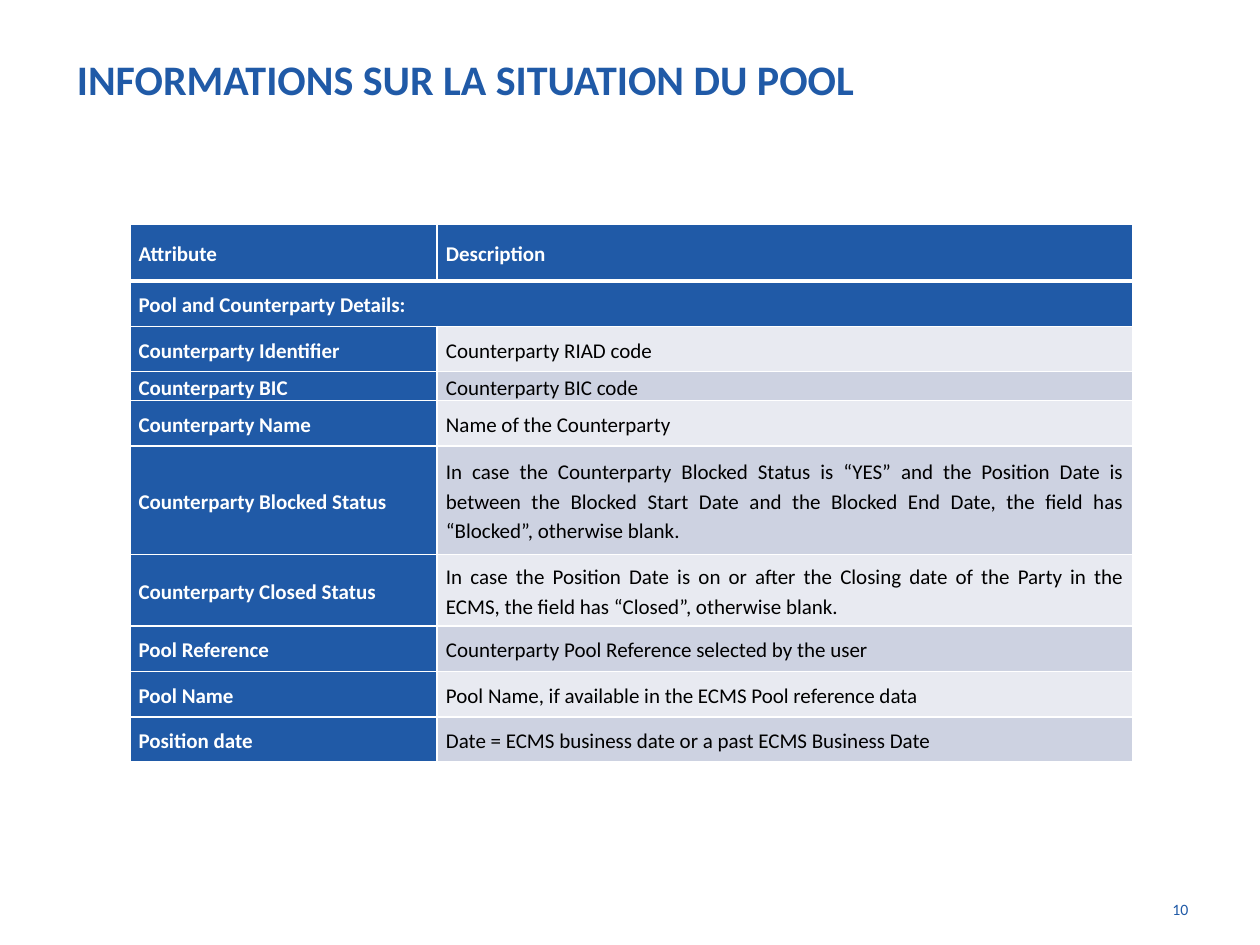
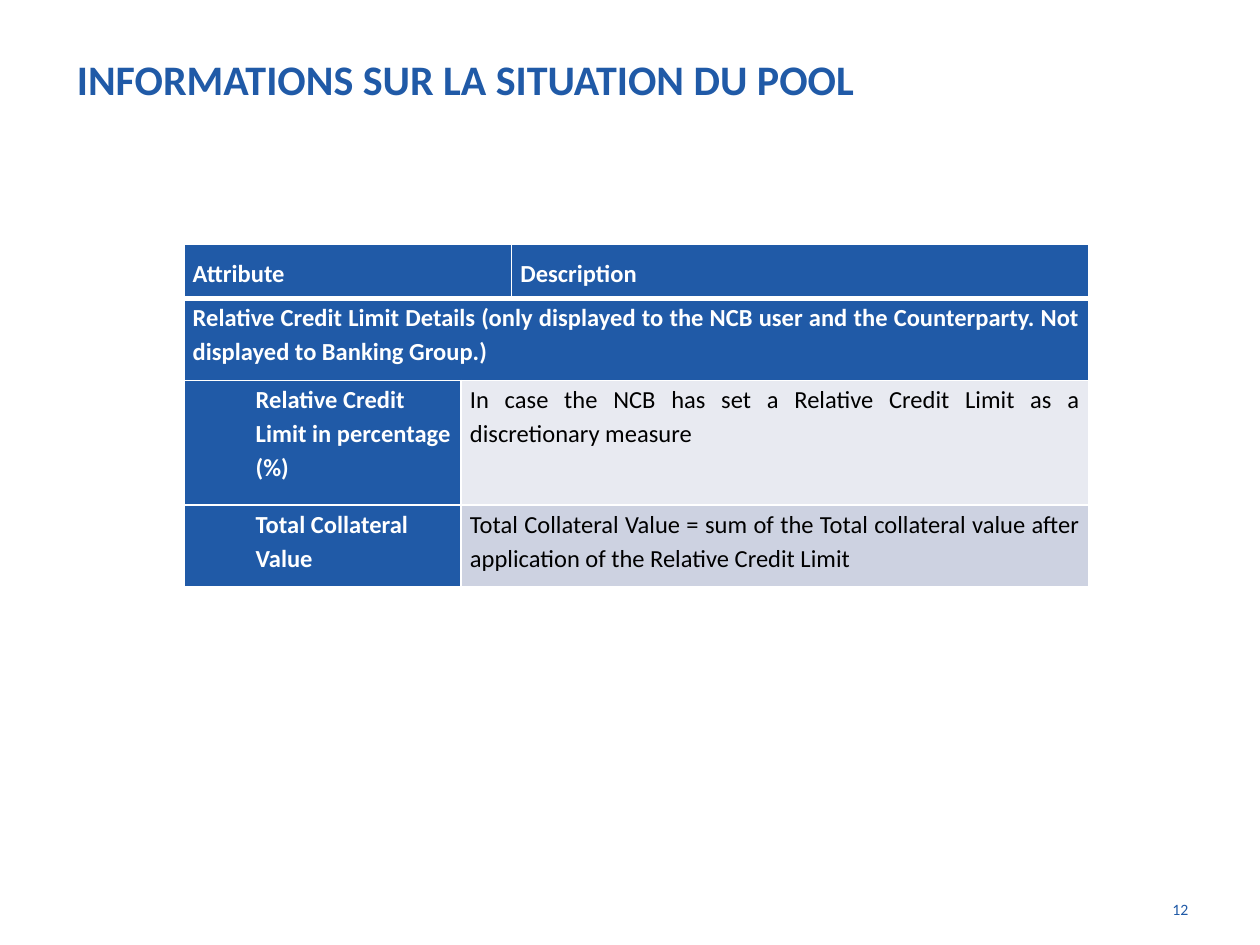
from dataclasses import dataclass
from lxml.etree import SubElement
from pptx import Presentation
from pptx.dml.color import RGBColor as Rgb
from pptx.enum.text import MSO_ANCHOR as Anchor, PP_ALIGN as Align
from pptx.oxml.ns import qn
from pptx.util import Inches, Pt

TITLE = "INFORMATIONS SUR LA SITUATION DU POOL"
HEAD = ("Attribute", "Description")

# "split" gives, for the header and the body, the column where the description starts.
# "just" lists the table rows whose description is justified.
PAGES = [
    dict(
        number="10", at=(1.03, 1.78), high=4.28, size=12,
        cols=(2.44, 5.52), split=(1, 1), indent=0, anchor=Anchor.MIDDLE,
        heights=(0.45, 0.36, 0.36, 0, 0.36, 0.86, 0.57, 0.36, 0.36, 0.36),
        band="Pool and Counterparty Details:", just=(5, 6),
        rows=[
            ("Counterparty Identifier", "Counterparty RIAD code"),
            ("Counterparty BIC", "Counterparty BIC code"),
            ("Counterparty Name", "Name of the Counterparty"),
            ("Counterparty Blocked Status",
             "In case the Counterparty Blocked Status is “YES” and the Position Date is "
             "between the Blocked Start Date and the Blocked End Date, the field has "
             "“Blocked”, otherwise blank."),
            ("Counterparty Closed Status",
             "In case the Position Date is on or after the Closing date of the Party in "
             "the ECMS, the field has “Closed”, otherwise blank."),
            ("Pool Reference", "Counterparty Pool Reference selected by the user"),
            ("Pool Name", "Pool Name, if available in the ECMS Pool reference data"),
            ("Position date", "Date = ECMS business date or a past ECMS Business Date"),
        ],
    ),
    dict(
        number="12", at=(1.46, 1.94), high=2.72, size=14,
        cols=(2.2, 0.4, 4.58), split=(2, 1), indent=0.5, anchor=Anchor.TOP,
        heights=(0.43, 0.65, 0.99, 0.65),
        band="Relative Credit Limit Details (only displayed to the NCB user and the "
             "Counterparty. Not displayed to Banking Group.)", just=(1, 2, 3),
        rows=[
            ("Relative Credit Limit in percentage (%)",
             "In case the NCB has set a Relative Credit Limit as a discretionary measure"),
            ("Total Collateral Value",
             "Total Collateral Value = sum of the Total collateral value after "
             "application of the Relative Credit Limit"),
        ],
    ),
]


@dataclass(frozen=True)
class Theme:
    font: str = "Calibri"
    blue: str = "205AA7"
    white: str = "FFFFFF"
    black: str = "000000"
    stripes: tuple = ("E8EAF1", "CDD2E1")
    title: int = 24
    number: int = 9
    thin: int = 1
    thick: int = 3


T = Theme()


def style(par, size, color, bold=False):
    for run in par.runs:
        font = run.font
        font.name, font.size, font.bold = T.font, Pt(size), bold
        font.color.rgb = Rgb.from_string(color)


def frame(cell, row):
    """Draw white cell borders, thick between the header and the rest."""
    props = cell._tc.get_or_add_tcPr()
    for side in "LRTB":
        thick = (row, side) in ((0, "B"), (1, "T"))
        line = SubElement(props, qn(f"a:ln{side}"),
                          w=str(Pt(T.thick if thick else T.thin)))
        fill = SubElement(line, qn("a:solidFill"))
        SubElement(fill, qn("a:srgbClr"), val=T.white)


def write(cell, text, size, color, bold, anchor, align, indent=0):
    cell.vertical_anchor = anchor
    par = cell.text_frame.paragraphs[0]
    par.text = text
    par.alignment, par.line_spacing, par.space_after = align, 1.15, Pt(8)
    if indent:
        props = par._p.get_or_add_pPr()
        props.set("marL", str(Inches(indent)))
        props.set("indent", "0")
    style(par, size, color, bold)


def add_grid(slide, page):
    cols, heights = page["cols"], page["heights"]
    left, top = page["at"]
    shape = slide.shapes.add_table(
        len(heights), len(cols), Inches(left), Inches(top),
        Inches(sum(cols)), Inches(page["high"]))
    table = shape.table
    table.first_row = table.horz_banding = False
    for col, wide in zip(table.columns, cols):
        col.width = Inches(wide)
    for row, high in zip(table.rows, heights):
        row.height = Inches(high)
    shape.height = Inches(page["high"])

    last = len(cols) - 1
    lines = [HEAD, (page["band"],), *page["rows"]]
    for r, line in enumerate(lines):
        split = page["split"][r > 0]
        spans = [(0, last)] if len(line) == 1 else [(0, split - 1), (split, last)]
        for c in range(len(cols)):
            cell = table.cell(r, c)
            cell.margin_left = cell.margin_right = Inches(0.07)
            cell.margin_top = cell.margin_bottom = 0
            frame(cell, r)
            plain = r > 1 and c >= split
            cell.fill.solid()
            cell.fill.fore_color.rgb = Rgb.from_string(
                T.stripes[r % 2] if plain else T.blue)
        for text, (start, end) in zip(line, spans):
            cell = table.cell(r, start)
            if end > start:
                cell.merge(table.cell(r, end))
            plain = r > 1 and start > 0
            just = r in page["just"] and (plain or r == 1)
            write(cell, text, page["size"], T.black if plain else T.white, not plain,
                  Anchor.MIDDLE if r == 0 else page["anchor"],
                  Align.JUSTIFY if just else Align.LEFT,
                  page["indent"] if r > 1 and start == 0 else 0)


def add_page(deck, page):
    slide = deck.slides.add_slide(deck.slide_layouts[5])
    title = slide.shapes.title
    title.left, title.top = Inches(0.51), 0
    title.width, title.height = Inches(9), Inches(1.25)
    title.text_frame.text = TITLE
    title.text_frame.vertical_anchor = Anchor.MIDDLE
    par = title.text_frame.paragraphs[0]
    par.alignment = Align.LEFT
    style(par, T.title, T.blue, True)

    box = slide.shapes.add_textbox(Inches(8.94), Inches(7.09), Inches(0.59), Inches(0.39))
    box.text_frame.word_wrap = True
    box.text_frame.text = page["number"]
    par = box.text_frame.paragraphs[0]
    par.alignment = Align.RIGHT
    style(par, T.number, T.blue)
    add_grid(slide, page)


def main():
    deck = Presentation()
    deck.slide_width, deck.slide_height = Inches(10), Inches(7.5)
    for page in PAGES:
        add_page(deck, page)
    deck.save("out.pptx")


if __name__ == "__main__":
    main()
